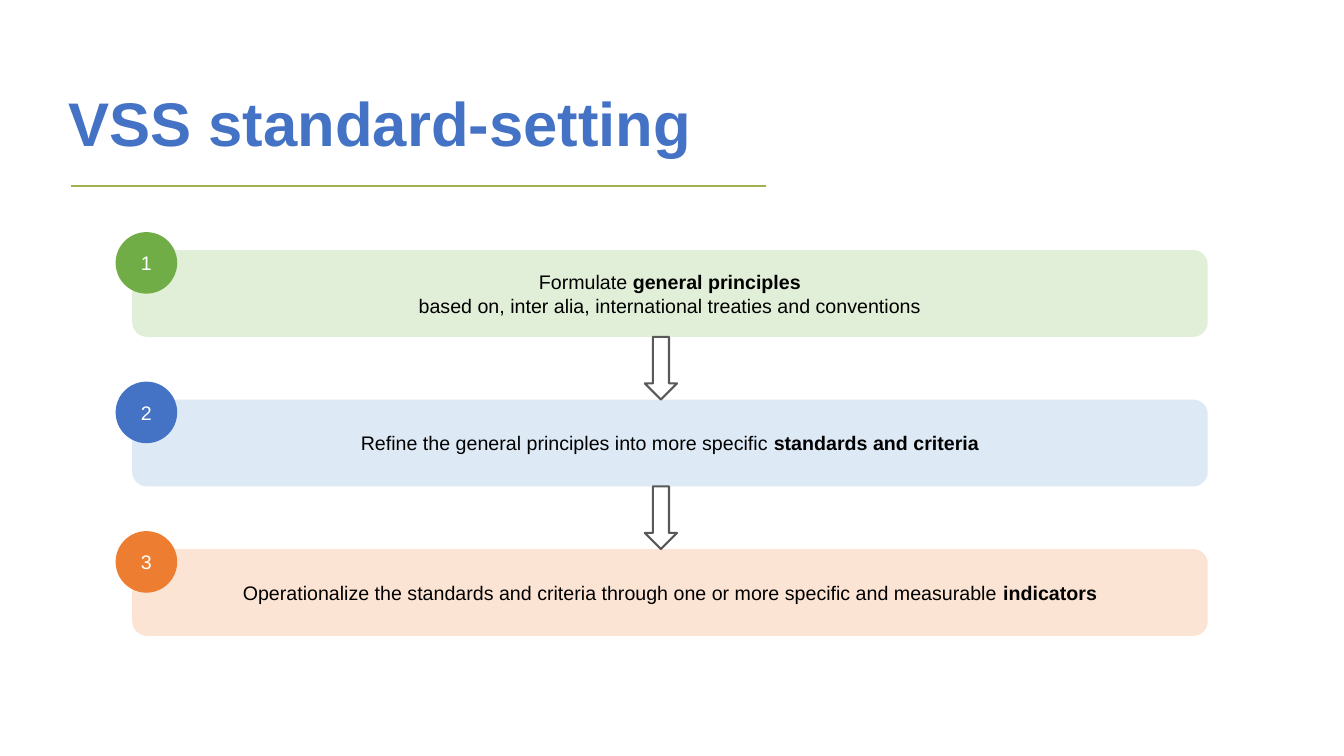
from pptx import Presentation, util as u
from pptx.dml.color import RGBColor
from pptx.enum import shapes, text
from pptx.oxml.ns import qn
from lxml import etree

# Content: each step has lines made of (words, bold) runs
TITLE = "VSS standard-setting"
STEPS = [
    [[("Formulate ", False), ("general principles", True)],
     [("based on, inter alia, international treaties and conventions", False)]],
    [[("Refine the general principles into more specific ", False),
      ("standards and criteria", True)]],
    [[("Operationalize the standards and criteria through one or more "
       "specific and measurable ", False), ("indicators", True)]],
]

THEME = {
    "font": "Arial", "title_size": 44, "body_size": 14,
    "title": "4472C4", "rule": "A3B04F", "arrow": "595959",
    "text": "000000", "badge_text": "FFFFFF",
    "bars": ["E1EFD8", "DDEAF6", "FBE4D4"],
    "badges": ["70AD47", "4472C4", "ED7D31"],
}

# Layout in points
BAR_X, BAR_Y, BAR_W, BAR_H = 94.5, 178.6, 768.2, 62
PITCH = 106.8
BADGE_X, BADGE_RISE, BADGE_D = 82.6, 12.8, 44
ARROW_X, ARROW_W = 460.6, 23


def color(name):
    return RGBColor.from_string(name)


def style(p, size, ink, align):
    p.alignment = align
    p.font.name = THEME["font"]
    p.font.size = u.Pt(size)
    p.font.color.rgb = color(ink)


def add_shape(s, kind, x, y, w, h, fill=None, line=None):
    sp = s.shapes.add_shape(kind, u.Pt(x), u.Pt(y), u.Pt(w), u.Pt(h))
    sp.shadow.inherit = False
    if fill:
        sp.fill.solid()
        sp.fill.fore_color.rgb = color(fill)
    else:
        sp.fill.background()
    if line:
        sp.line.color.rgb = color(line)
        sp.line.width = u.Pt(1.5)
    else:
        sp.line.fill.background()
    return sp


def write(sp, lines, ink):
    tf = sp.text_frame
    tf.word_wrap = True
    tf.vertical_anchor = text.MSO_ANCHOR.MIDDLE
    for i, line in enumerate(lines):
        p = tf.paragraphs[0] if i == 0 else tf.add_paragraph()
        style(p, THEME["body_size"], ink, text.PP_ALIGN.CENTER)
        for words, bold in line:
            r = p.add_run()
            r.text = words
            r.font.bold = bold


def add_title(s):
    sp = s.shapes.title
    sp.left, sp.top, sp.width, sp.height = map(u.Pt, (41.8, 16.6, 518.4, 101.5))
    tf = sp.text_frame
    tf.text = TITLE
    tf.word_wrap = True
    tf.auto_size = text.MSO_AUTO_SIZE.NONE
    tf.vertical_anchor = text.MSO_ANCHOR.BOTTOM
    p = tf.paragraphs[0]
    style(p, THEME["title_size"], THEME["title"], text.PP_ALIGN.LEFT)
    p.font.bold = True
    p.line_spacing = 0.9

    # Rule below the title
    rule = s.shapes.add_connector(shapes.MSO_CONNECTOR.STRAIGHT,
                                  *map(u.Pt, (50.6, 132.8, 547.2, 132.8)))
    rule.line.color.rgb = color(THEME["rule"])
    rule.line.width = u.Pt(1.5)
    etree.SubElement(rule._element.spPr, qn("a:effectLst"))


def add_steps(s):
    kind = shapes.MSO_SHAPE
    tops = [BAR_Y + i * PITCH for i in range(len(STEPS))]

    # Bars
    for y, lines, fill in zip(tops, STEPS, THEME["bars"]):
        bar = add_shape(s, kind.ROUNDED_RECTANGLE, BAR_X, y, BAR_W, BAR_H, fill)
        write(bar, lines, THEME["text"])

    # Arrows fill the gaps between bars
    for y in tops[:-1]:
        add_shape(s, kind.DOWN_ARROW, ARROW_X, y + BAR_H, ARROW_W,
                  PITCH - BAR_H, line=THEME["arrow"])

    # Number badges
    for n, (y, fill) in enumerate(zip(tops, THEME["badges"]), 1):
        badge = add_shape(s, kind.OVAL, BADGE_X, y - BADGE_RISE,
                          BADGE_D, BADGE_D, fill)
        write(badge, [[(str(n), False)]], THEME["badge_text"])


def main():
    prs = Presentation()
    prs.slide_width, prs.slide_height = u.Pt(960), u.Pt(540)
    s = prs.slides.add_slide(prs.slide_layouts[5])
    add_title(s)
    add_steps(s)
    prs.save("out.pptx")


if __name__ == "__main__":
    main()
